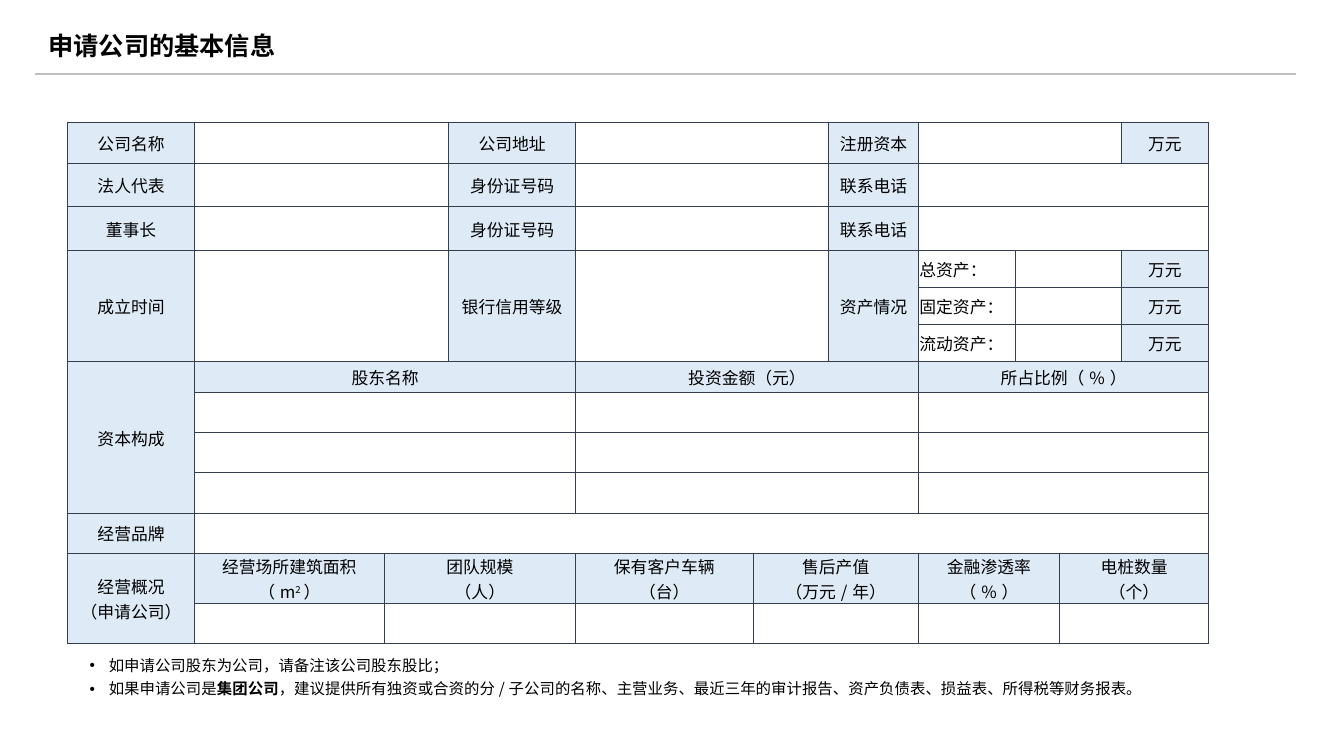
from lxml.etree import SubElement
from pptx import Presentation
from pptx.dml.color import RGBColor
from pptx.enum.shapes import MSO_CONNECTOR
from pptx.enum.text import MSO_ANCHOR, PP_ALIGN
from pptx.oxml.ns import qn
from pptx.util import Pt

PX = 9144  # 100 px to the inch
FACE = "Noto Sans CJK SC"
BLACK = RGBColor(0, 0, 0)
WHITE = RGBColor(255, 255, 255)
PALE = RGBColor(0xDE, 0xEB, 0xF7)
GREY = RGBColor(0xBF, 0xBF, 0xBF)
EDGE = RGBColor(0x33, 0x3F, 0x50)

TITLE = {"size": Pt(18), "bold": True}
LABEL = {"size": Pt(12), "bold": False}
NOTE = {"size": Pt(11), "bold": False}

COLS = [126, 188, 64, 126, 176, 75, 89, 96, 44, 61, 87]
ROWS = [41, 43, 43, 37, 37, 37, 30, 40, 40, 40, 40, 49, 40]
GAP = [("", 3), ("", 3), ("", 4)]

# Each entry: text, columns spanned, rows spanned (1 when left out).
# Text between bars is raised in the form and bold in the notes.
FORM = [
    [("公司名称", 1), ("", 2), ("公司地址", 1), ("", 2), ("注册资本", 1), ("", 3), ("万元", 1)],
    [("法人代表", 1), ("", 2), ("身份证号码", 1), ("", 2), ("联系电话", 1), ("", 4)],
    [("董事长", 1), ("", 2), ("身份证号码", 1), ("", 2), ("联系电话", 1), ("", 4)],
    [("成立时间", 1, 3), ("", 2, 3), ("银行信用等级", 1, 3), ("", 2, 3), ("资产情况", 1, 3),
     ("总资产：", 1), ("", 2), ("万元", 1)],
    [("固定资产：", 1), ("", 2), ("万元", 1)],
    [("流动资产：", 1), ("", 2), ("万元", 1)],
    [("资本构成", 1, 4), ("股东名称", 3), ("投资金额（元）", 3), ("所占比例（%）", 4)],
    GAP,
    GAP,
    GAP,
    [("经营品牌", 1), ("", 10)],
    [("经营概况\n（申请公司）", 1, 2), ("经营场所建筑面积\n（m|2|）", 1), ("团队规模\n（人）", 2),
     ("保有客户车辆\n（台）", 1), ("售后产值\n（万元/年）", 2), ("金融渗透率\n（%）", 2),
     ("电桩数量\n（个）", 2)],
    [("", 1), ("", 2), ("", 1), ("", 2), ("", 2), ("", 2)],
]
NOTES = [
    "如申请公司股东为公司，请备注该公司股东股比；",
    "如果申请公司是|集团公司|，建议提供所有独资或合资的分/子公司的名称、主营业务、"
    "最近三年的审计报告、资产负债表、损益表、所得税等财务报表。",
]


def assign(item, form):
    for name, value in form.items():
        setattr(item, name, value)


def write(par, text, form, bold=False):
    """Add runs; pieces between bars become bold or raised."""
    for i, piece in enumerate(text.split("|")):
        run = par.add_run()
        run.text = piece
        assign(run.font, form)
        run.font.color.rgb = BLACK
        run.font.name = FACE
        props = run._r.get_or_add_rPr()
        SubElement(props, qn("a:ea"), typeface=FACE)
        if i % 2 and bold:
            run.font.bold = True
        elif i % 2:
            props.set("baseline", "30000")


def border(cell):
    props = cell._tc.get_or_add_tcPr()
    for side in "LRTB":
        line = SubElement(props, qn(f"a:ln{side}"), w=str(Pt(0.5)))
        fill = SubElement(line, qn("a:solidFill"))
        SubElement(fill, qn("a:srgbClr"), val=str(EDGE))


def fill_cell(cell, text):
    cell.fill.solid()
    left = text.endswith("：")
    cell.fill.fore_color.rgb = PALE if text and not left else WHITE
    frame = cell.text_frame
    for i, line in enumerate(text.split("\n") if text else []):
        par = frame.add_paragraph() if i else frame.paragraphs[0]
        par.alignment = PP_ALIGN.LEFT if left else PP_ALIGN.CENTER
        write(par, line, LABEL)


def add_head(slide, x, y, w, h):
    title = slide.shapes.title
    assign(title, {"left": x * PX, "top": y * PX, "width": w * PX, "height": h * PX})
    frame = title.text_frame
    assign(frame, {"word_wrap": True, "vertical_anchor": MSO_ANCHOR.MIDDLE})
    par = frame.paragraphs[0]
    par.alignment = PP_ALIGN.LEFT
    write(par, "申请公司的基本信息", TITLE)
    left, base = (x - 3) * PX, (y + h + 8) * PX
    rule = slide.shapes.add_connector(MSO_CONNECTOR.STRAIGHT, left, base, left + 1250 * PX, base)
    rule.line.color.rgb = GREY
    rule.line.width = Pt(1.5)
    SubElement(rule._element.spPr, qn("a:effectLst"))


def add_form(slide, x, y):
    table = slide.shapes.add_table(
        len(ROWS), len(COLS), x * PX, y * PX, sum(COLS) * PX, sum(ROWS) * PX).table
    assign(table, {"first_row": False, "horz_banding": False})
    for col, size in zip(table.columns, COLS):
        col.width = size * PX
    for row, size in zip(table.rows, ROWS):
        row.height = size * PX
    for cell in table.iter_cells():
        assign(cell, {"margin_left": PX, "margin_right": PX, "margin_top": PX,
                      "margin_bottom": 0, "vertical_anchor": MSO_ANCHOR.MIDDLE})
        border(cell)
        par = cell.text_frame.paragraphs[0]
        SubElement(par._p, qn("a:endParaRPr"), sz="1200")
    for r, row in enumerate(FORM):
        c = 0
        for text, wide, *deep in row:
            while table.cell(r, c).is_spanned:
                c += 1
            cell = table.cell(r, c)
            tall = deep[0] if deep else 1
            if wide * tall > 1:
                cell.merge(table.cell(r + tall - 1, c + wide - 1))
            fill_cell(cell, text)
            c += wide


def add_notes(slide, x, y, w, h):
    frame = slide.shapes.add_textbox(x * PX, y * PX, w * PX, h * PX).text_frame
    assign(frame, {"word_wrap": True, "vertical_anchor": MSO_ANCHOR.MIDDLE})
    for i, text in enumerate(NOTES):
        par = frame.add_paragraph() if i else frame.paragraphs[0]
        par.line_spacing = 1.25
        props = par._p.get_or_add_pPr()
        props.set("marL", str(19 * PX))
        props.set("indent", str(-19 * PX))
        SubElement(props, qn("a:buFont"), typeface="Arial")
        SubElement(props, qn("a:buChar"), char="•")
        write(par, text, NOTE, bold=True)


def main():
    deck = Presentation()
    assign(deck, {"slide_width": 1333 * PX, "slide_height": 750 * PX})
    slide = deck.slides.add_slide(deck.slide_layouts[5])
    add_head(slide, 38, 25, 270, 40)
    add_form(slide, 67, 121)
    add_notes(slide, 79, 637, 1109, 65)
    deck.save("out.pptx")


if __name__ == "__main__":
    main()
